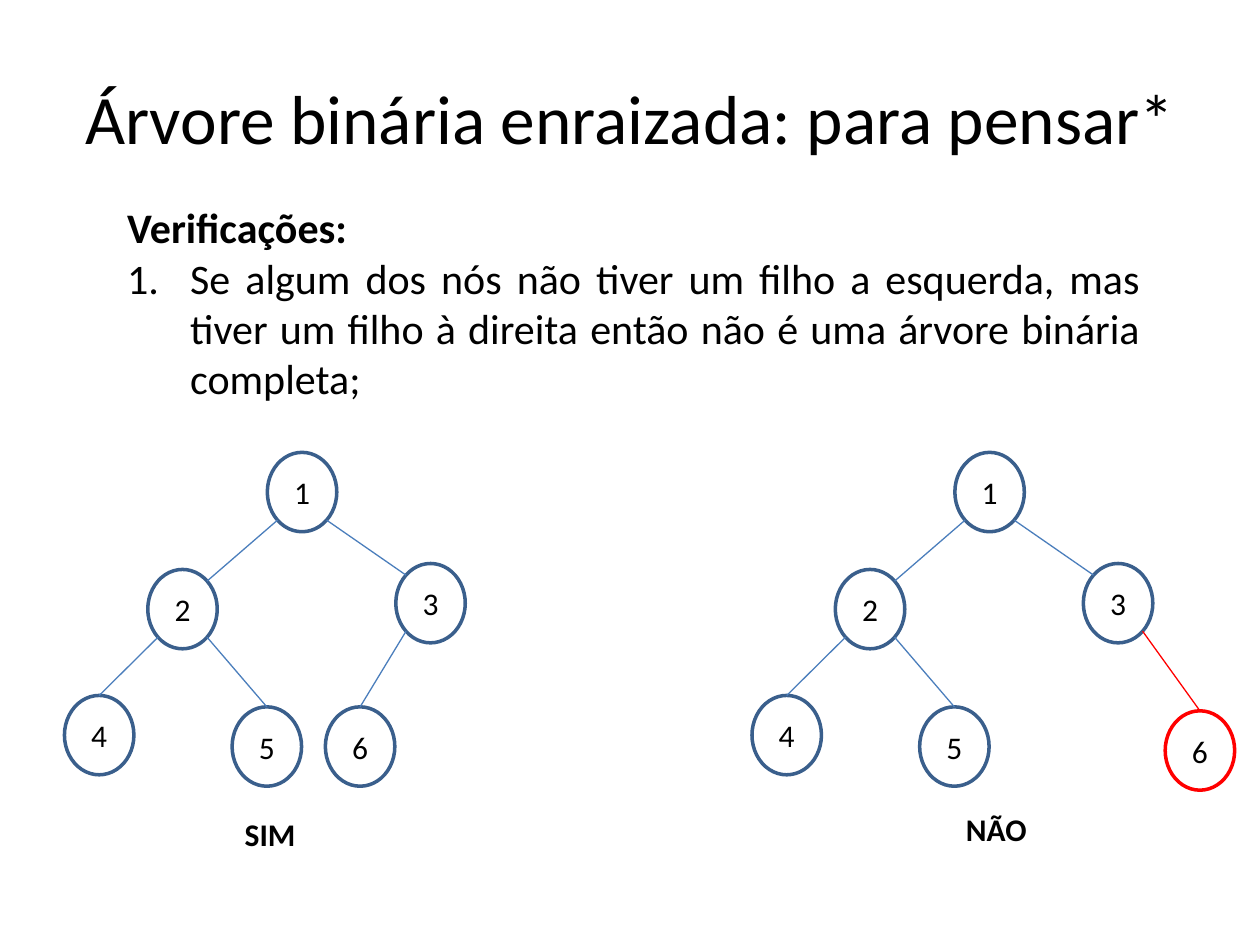
from math import sqrt

from lxml.etree import SubElement
from pptx import Presentation
from pptx.dml.color import RGBColor
from pptx.enum.shapes import MSO_CONNECTOR, MSO_SHAPE
from pptx.enum.text import MSO_ANCHOR, MSO_AUTO_SIZE, PP_ALIGN
from pptx.oxml.ns import qn
from pptx.util import Cm, Pt

FONT = "Calibri"
BLACK, NODE_BLUE, EDGE_BLUE, RED = "000000", "3A5F8C", "4B7EBC", "FF0000"
NODE_WIDTH, NODE_HEIGHT = 1.4, 1.6
TREE_TOP = 9.12

# Node offsets from the tree's top left corner, in cm
SHARED_NODES = {"1": (4.09, 0), "2": (1.68, 2.36), "3": (6.68, 2.24),
                "4": (0, 4.9), "5": (3.38, 5.13)}
# Parent, child, side of the parent (-1 left, 1 right)
SHARED_EDGES = [("1", "2", -1), ("1", "3", 1), ("2", "4", -1), ("2", "5", 1)]


def colour(value):
    return RGBColor.from_string(value)


def format_para(para, size, align, bold=False):
    para.alignment = align
    for span in para.runs:
        span.font.name = FONT
        span.font.size = Pt(size)
        span.font.bold = bold
        span.font.color.rgb = colour(BLACK)


def place(shape, left, top, width, height):
    shape.left, shape.top = Cm(left), Cm(top)
    shape.width, shape.height = Cm(width), Cm(height)


def add_title(slide, left, top, width, height):
    title = slide.shapes.title
    place(title, left, top, width, height)
    frame = title.text_frame
    frame.text = "Árvore binária enraizada: para pensar*"
    frame.auto_size = MSO_AUTO_SIZE.NONE
    frame.vertical_anchor = MSO_ANCHOR.MIDDLE
    format_para(frame.paragraphs[0], 39.6, PP_ALIGN.CENTER)


def add_checks(slide, left, top, width, height):
    body = slide.placeholders[1]
    place(body, left, top, width, height)
    frame = body.text_frame
    frame.auto_size = MSO_AUTO_SIZE.NONE
    frame.text = ("Verificações:\n"
                  "Se algum dos nós não tiver um filho a esquerda, mas tiver um "
                  "filho à direita então não é uma árvore binária completa;")
    heading, item = frame.paragraphs
    for para, indent in ((heading, 0), (item, 1.27)):
        format_para(para, 24, PP_ALIGN.JUSTIFY, bold=para is heading)
        para.space_before = Pt(0)
        properties = para._p.get_or_add_pPr()
        properties.set("marL", str(Cm(indent)))
        properties.set("indent", str(-Cm(indent)))
    SubElement(heading._p.pPr, qn("a:buNone"))
    SubElement(item._p.pPr, qn("a:buFont")).set("typeface", "+mj-lt")
    SubElement(item._p.pPr, qn("a:buAutoNum")).set("type", "arabicPeriod")


def add_node(slide, text, left, top, line):
    node = slide.shapes.add_shape(MSO_SHAPE.OVAL, Cm(left), Cm(top),
                                  Cm(NODE_WIDTH), Cm(NODE_HEIGHT))
    node.shadow.inherit = False
    node.fill.background()
    node.line.color.rgb = colour(line)
    node.line.width = Pt(2)
    node.text_frame.text = text
    node.text_frame.vertical_anchor = MSO_ANCHOR.MIDDLE
    format_para(node.text_frame.paragraphs[0], 18, PP_ALIGN.CENTER)
    return node


def diagonal_point(node, across, down):
    """Point on the oval's rim, 45 degrees towards the given corner."""
    return (int(node.left + node.width / 2 * (1 + across / sqrt(2))),
            int(node.top + node.height / 2 * (1 + down / sqrt(2))))


def add_edge(slide, parent, child, side, line, to_leaf):
    start = diagonal_point(parent, side, 1)
    end = diagonal_point(child, -side, -1)
    edge = slide.shapes.add_connector(MSO_CONNECTOR.STRAIGHT, *start, *end)
    if to_leaf:
        edge.end_connect(child, 0)
    edge.line.color.rgb = colour(line)
    edge.line.width = Pt(0.75)
    SubElement(edge._element.spPr, qn("a:effectLst"))


def add_verdict(slide, text, left, top):
    box = slide.shapes.add_textbox(Cm(left), Cm(top), Cm(5.49), Cm(1.73))
    frame = box.text_frame
    frame.word_wrap = True
    frame.vertical_anchor = MSO_ANCHOR.MIDDLE
    frame.text = text
    format_para(frame.paragraphs[0], 18, PP_ALIGN.CENTER, bold=True)


def add_tree(slide, left, top, last_offset, last_side, verdict, verdict_offset,
             wrong=False):
    """Tree whose sixth node hangs on the given side of node 3."""
    offsets = {**SHARED_NODES, "6": last_offset}
    nodes = {}
    for name, (across, down) in offsets.items():
        line = RED if wrong and name == "6" else NODE_BLUE
        nodes[name] = add_node(slide, name, left + across, top + down, line)
    for parent, child, side in SHARED_EDGES + [("3", "6", last_side)]:
        line = RED if wrong and child == "6" else EDGE_BLUE
        add_edge(slide, nodes[parent], nodes[child], side, line,
                 to_leaf=parent != "1")
    across, down = verdict_offset
    add_verdict(slide, verdict, left + across, top + down)


def main():
    deck = Presentation()
    deck.slide_width, deck.slide_height = Cm(25.4), Cm(19.05)
    slide = deck.slides.add_slide(deck.slide_layouts[1])
    add_title(slide, 1.27, 0.76, 22.86, 3.18)
    add_checks(slide, 2.31, 3.94, 20.93, 4.39)
    # Complete tree on the left, incomplete tree on the right
    add_tree(slide, 1.3, TREE_TOP, (5.26, 5.13), -1, "SIM", (1.4, 6.83))
    add_tree(slide, 15.16, TREE_TOP, (8.33, 5.21), 1, "NÃO", (2.18, 6.73),
             wrong=True)
    deck.save("out.pptx")


if __name__ == "__main__":
    main()
